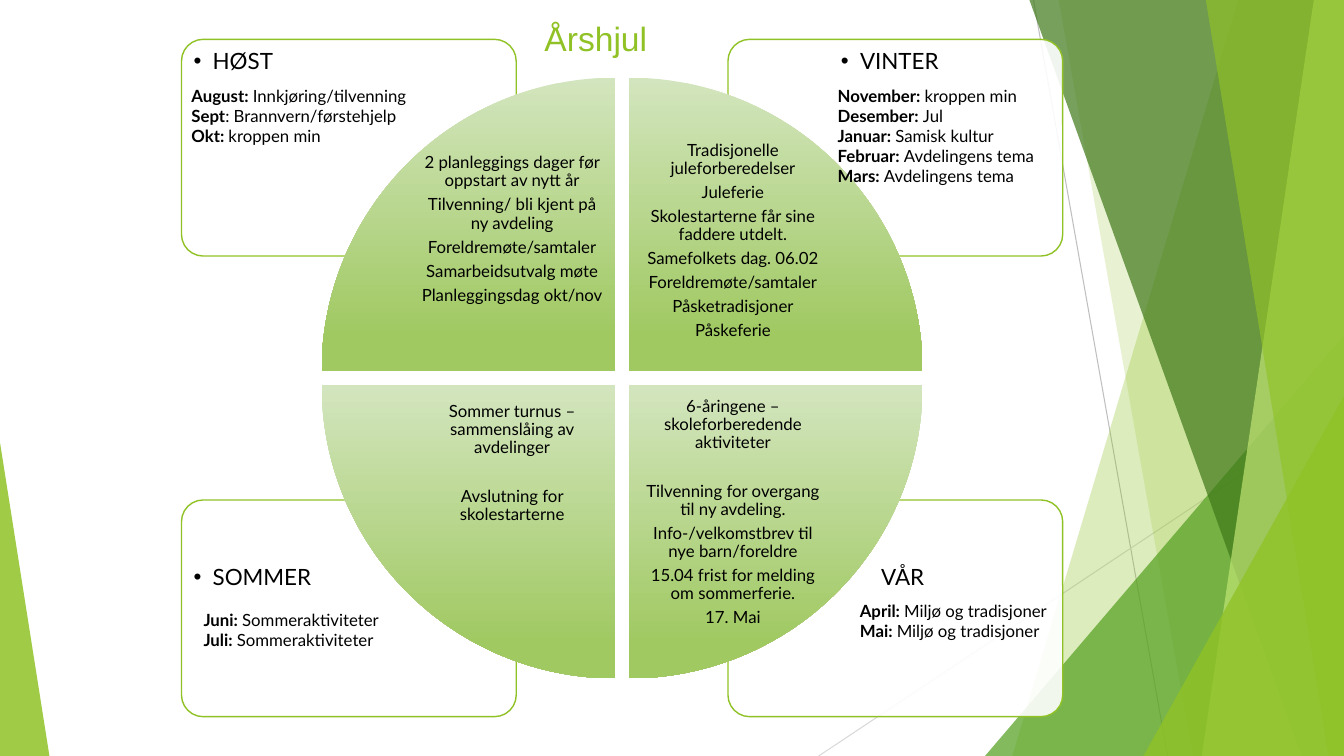
from lxml import etree
from pptx import Presentation
from pptx.dml.color import RGBColor
from pptx.enum.shapes import MSO_CONNECTOR, MSO_SHAPE
from pptx.enum.text import MSO_ANCHOR, PP_ALIGN
from pptx.oxml.ns import qn
from pptx.util import Inches, Pt

LINE = MSO_CONNECTOR.STRAIGHT
TRIANGLE, CARD, WEDGE = MSO_SHAPE.ISOSCELES_TRIANGLE, MSO_SHAPE.ROUNDED_RECTANGLE, MSO_SHAPE.PIE_WEDGE
TOP, LEFT, CENTER = MSO_ANCHOR.TOP, PP_ALIGN.LEFT, PP_ALIGN.CENTER
SLIDE_W, SLIDE_H = 13.33, 7.5


class Theme:
    green, forest, dark, lime = "90C226", "54A021", "3F7819", "C0E474"
    white, black = "FFFFFF", "000000"
    wedge_stops = ((0, "D3E5BE"), (0.88, "A0C962"))
    title = dict(name="Arial", size=Pt(24), bold=False)
    season = dict(name="Lato", size=Pt(16), bold=False)
    body = dict(name="Lato", size=Pt(12), bold=False)
    month = dict(name="Lato", size=Pt(12), bold=True)


# Background: bands reach the right edge (top x, bottom x, colour, opacity)
BANDS_BACK = [(12.28, 10.04, Theme.green, 30), (10.5, 11.83, Theme.green, 20)]
BANDS_FRONT = [(10.21, 12.91, Theme.dark, 70), (13.03, 11.92, Theme.lime, 70),
               (11.96, 13.18, Theme.green, 65)]
# Corner triangles: left, width, height, apex, colour, opacity
TRIANGLE_BACK = (9.77, 3.56, 4.17, 1, Theme.forest, 72)
TRIANGLES_FRONT = [(11.34, 1.99, 3.57, 1, Theme.green, 80), (0, 0.49, 3.11, 0, Theme.green, 85)]
RAYS = [(10.25, 0, 11.58, 7.5, "BFBFBF"), (13.33, 4.03, 8.12, 7.5, "D9D9D9")]

# Wheel geometry: one x per column, one y per row
CARD_X, CARD_Y = (1.8, 7.22), (0.39, 4.96)
LABEL_X, LABEL_Y = (1.85, 8.27), (0.43, 5.55)
WEDGE_X, WEDGE_Y = (3.19, 6.24), (0.77, 3.82)
EVENTS_X = (4.05, 6.24)
GAP = 17.4  # height of one skipped line, in points

SEASONS = [
    dict(name="HØST", col=0, row=0, turn=0, months_at=(1.8, 0.8), events_y=1.44,
         months=[("August: ", "Innkjøring/tilvenning"), ("Sept", ": Brannvern/førstehjelp"),
                 ("Okt: ", "kroppen min")],
         events=["2 planleggings dager før oppstart av nytt år", "Tilvenning/ bli kjent på ny avdeling",
                 "Foreldremøte/samtaler", "Samarbeidsutvalg møte", "Planleggingsdag okt/nov"]),
    dict(name="VINTER", col=1, row=0, turn=90, months_at=(8.21, 0.8), events_y=1.32,
         months=[("November: ", "kroppen min"), ("Desember: ", "Jul"), ("Januar: ", "Samisk kultur"),
                 ("Februar: ", "Avdelingens tema"), ("Mars: ", "Avdelingens tema")],
         events=["Tradisjonelle juleforberedelser", "Juleferie",
                 "Skolestarterne får sine faddere utdelt.", "Samefolkets dag. 06.02",
                 "Foreldremøte/samtaler", "Påsketradisjoner", "Påskeferie"]),
    dict(name="VÅR", col=1, row=1, turn=180, months_at=(8.43, 5.91), events_y=3.86,
         bullet=False, gap_before=1,
         months=[("April: ", "Miljø og tradisjoner"), ("Mai: ", "Miljø og tradisjoner")],
         events=["6-åringene – skoleforberedende aktiviteter", "Tilvenning for overgang til ny avdeling.",
                 "Info-/velkomstbrev til nye barn/foreldre", "15.04 frist for melding om sommerferie.",
                 "17. Mai"]),
    dict(name="SOMMER", col=0, row=1, turn=270, months_at=(1.92, 6), events_y=3.91, gap_before=1,
         months=[("Juni: ", "Sommeraktiviteter"), ("Juli: ", "Sommeraktiviteter")],
         events=["Sommer turnus – sammenslåing av avdelinger", "Avslutning for skolestarterne"]),
]


def rgb(color):
    return RGBColor.from_string(color)


def paint(sp, color, opacity):
    sp.shadow.inherit = False
    sp.fill.solid()
    sp.fill.fore_color.rgb = rgb(color)
    clr = sp._element.spPr.find(qn("a:solidFill"))[0]
    etree.SubElement(clr, qn("a:alpha")).set("val", str(opacity * 1000))
    sp.line.fill.background()


def add_run(p, text, style, color=Theme.black):
    r = p.add_run()
    r.text = text
    for key, value in style.items():
        setattr(r.font, key, value)
    r.font.color.rgb = rgb(color)


def add_text(s, x, y, w, h, inset_x, inset_y):
    tf = s.shapes.add_textbox(*map(Inches, (x, y, w, h))).text_frame
    tf.word_wrap = True
    tf.margin_left = tf.margin_right = Inches(inset_x)
    tf.margin_top = tf.margin_bottom = Inches(inset_y)
    return tf


def paragraphs(tf, items):
    for i, item in enumerate(items):
        yield i, item, tf.add_paragraph() if i else tf.paragraphs[0]


def add_ray(s, x1, y1, x2, y2, color):
    ray = s.shapes.add_connector(LINE, *map(Inches, (x1, y1, x2, y2)))
    ray.line.color.rgb = rgb(color)
    ray.line.width = Pt(0.75)
    etree.SubElement(ray._element.spPr, qn("a:effectLst"))


def add_band(s, top_x, bottom_x, color, opacity):
    corners = [(top_x, 0), (SLIDE_W, 0), (SLIDE_W, SLIDE_H), (bottom_x, SLIDE_H)]
    points = [(Inches(x), Inches(y)) for x, y in corners]
    fb = s.shapes.build_freeform(*points[0])
    fb.add_line_segments(points[1:])
    paint(fb.convert_to_shape(), color, opacity)


def add_triangle(s, x, w, h, apex, color, opacity):
    sp = s.shapes.add_shape(TRIANGLE, *map(Inches, (x, SLIDE_H - h, w, h)))
    sp.adjustments[0] = apex
    paint(sp, color, opacity)


def add_background(s):
    for ray in RAYS:
        add_ray(s, *ray)
    for band in BANDS_BACK:
        add_band(s, *band)
    add_triangle(s, *TRIANGLE_BACK)
    for band in BANDS_FRONT:
        add_band(s, *band)
    for triangle in TRIANGLES_FRONT:
        add_triangle(s, *triangle)


def add_card(s, season):
    col, row = season["col"], season["row"]
    sp = s.shapes.add_shape(CARD, *map(Inches, (CARD_X[col], CARD_Y[row], 3.32, 2.15)))
    sp.adjustments[0] = 0.1
    paint(sp, Theme.white, 90)
    sp.line.color.rgb = rgb(Theme.green)
    sp.line.width = Pt(1)
    # Season name
    p = add_text(s, LABEL_X[col], LABEL_Y[row], 2.23, 0.45, 0.07, 0.07).paragraphs[0]
    p.line_spacing = 0.9
    add_run(p, season["name"], Theme.season)
    bullet = season.get("bullet", True)
    pPr = p._p.get_or_add_pPr()
    pPr.set("marL", str(Inches(0.19 if bullet else 0.4)))
    if bullet:
        pPr.set("indent", str(Inches(-0.19)))
        etree.SubElement(pPr, qn("a:buFont")).set("typeface", "Arial")
        etree.SubElement(pPr, qn("a:buChar")).set("char", "•")


def add_wedge(s, season):
    col, row = season["col"], season["row"]
    sp = s.shapes.add_shape(WEDGE, *map(Inches, (WEDGE_X[col], WEDGE_Y[row], 2.91, 2.91)))
    sp.rotation = season["turn"]
    sp.shadow.inherit = False
    sp.line.fill.background()
    sp.fill.gradient()
    sp.fill.gradient_angle = 270
    for stop, (position, color) in zip(sp.fill.gradient_stops, Theme.wedge_stops):
        stop.position = position
        stop.color.rgb = rgb(color)
    # Light edge stays on top whatever the rotation
    sp._element.spPr.find(qn("a:gradFill")).set("rotWithShape", "0")
    # Events
    tf = add_text(s, EVENTS_X[col], season["events_y"], 2.06, 2.06, 0.09, 0.09)
    for i, event, p in paragraphs(tf, season["events"]):
        p.alignment, p.line_spacing, p.space_after = CENTER, 0.9, Pt(4.2)
        if i and i == season.get("gap_before"):
            p.space_before = Pt(GAP)
        add_run(p, event, Theme.body)


def add_months(s, season):
    tf = add_text(s, *season["months_at"], 2.58, 0.1 + 0.2 * len(season["months"]), 0.1, 0.05)
    for _, (month, topic), p in paragraphs(tf, season["months"]):
        add_run(p, month, Theme.month)
        add_run(p, topic, Theme.body)


def add_title(s, text):
    sp = s.shapes.title
    sp.left, sp.top, sp.width, sp.height = map(Inches, (5.3, 0.13, 2.04, 0.5))
    tf = sp.text_frame
    tf.vertical_anchor = TOP
    p = tf.paragraphs[0]
    p.alignment = LEFT
    add_run(p, text, Theme.title, Theme.green)


def main():
    prs = Presentation()
    prs.slide_width, prs.slide_height = Inches(SLIDE_W), Inches(SLIDE_H)
    s = prs.slides.add_slide(prs.slide_layouts[5])
    add_background(s)
    for add_part in (add_card, add_wedge, add_months):
        for season in SEASONS:
            add_part(s, season)
    add_title(s, "Årshjul")
    prs.save("out.pptx")


if __name__ == "__main__":
    main()
